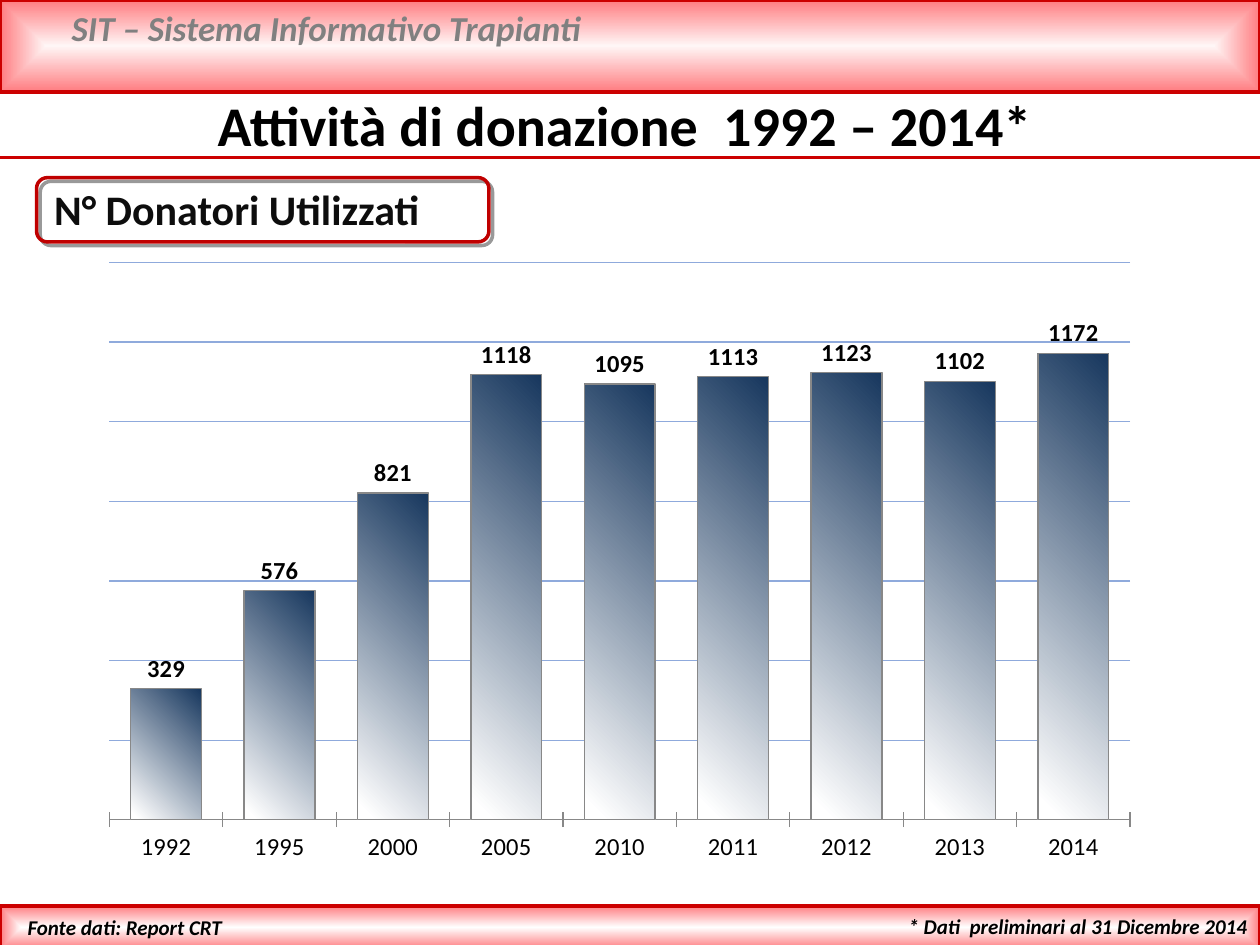
from dataclasses import dataclass

from lxml import etree
from pptx import Presentation
from pptx.chart.data import CategoryChartData
from pptx.dml.color import RGBColor
from pptx.enum.chart import XL_CHART_TYPE, XL_LABEL_POSITION, XL_TICK_MARK
from pptx.enum.shapes import MSO_CONNECTOR, MSO_SHAPE
from pptx.enum.text import MSO_AUTO_SIZE, PP_ALIGN
from pptx.oxml import parse_xml
from pptx.oxml.ns import nsdecls, qn
from pptx.util import Inches, Pt

COLUMNS = XL_CHART_TYPE.COLUMN_CLUSTERED
OUTSIDE_END = XL_LABEL_POSITION.OUTSIDE_END
TICK_CROSS, TICK_NONE = XL_TICK_MARK.CROSS, XL_TICK_MARK.NONE
STRAIGHT = MSO_CONNECTOR.STRAIGHT
RECTANGLE, ROUNDED = MSO_SHAPE.RECTANGLE, MSO_SHAPE.ROUNDED_RECTANGLE
FIT_TEXT = MSO_AUTO_SIZE.SHAPE_TO_FIT_TEXT
LEFT, CENTER, RIGHT = PP_ALIGN.LEFT, PP_ALIGN.CENTER, PP_ALIGN.RIGHT

FONT = "Calibri"
BLACK = RGBColor(0x00, 0x00, 0x00)
NEAR_BLACK = RGBColor(0x0D, 0x0D, 0x0D)
WHITE = RGBColor(0xFF, 0xFF, 0xFF)
GRAY = RGBColor(0x80, 0x80, 0x80)
AXIS_GRAY = RGBColor(0x88, 0x88, 0x88)
RED = RGBColor(0xCC, 0x00, 0x00)
DARK_RED = RGBColor(0xC0, 0x00, 0x00)
PINK = RGBColor(0xFF, 0x7C, 0x80)
PALE_PINK = RGBColor(0xFF, 0xF6, 0xF6)
NAVY = RGBColor(0x17, 0x37, 0x5E)
GRID_BLUE = RGBColor(0x8F, 0xAA, 0xDC)

DONORS = {
    "1992": 329, "1995": 576, "2000": 821,
    "2005": 1118, "2010": 1095, "2011": 1113,
    "2012": 1123, "2013": 1102, "2014": 1172,
}


@dataclass(frozen=True)
class Box:
    left: float
    top: float
    width: float
    height: float

    def lengths(self) -> tuple:
        return tuple(map(Inches, (self.left, self.top, self.width, self.height)))


@dataclass(frozen=True)
class Band:
    box: Box
    center: RGBColor


BANDS = (
    Band(Box(0, 0, 10, 0.73), PALE_PINK),
    Band(Box(0, 7.19, 10, 0.34), WHITE),
)


def set_gradient(fill, start: RGBColor, end: RGBColor) -> None:
    fill.gradient()
    for stop, color in zip(fill.gradient_stops, (start, end)):
        stop.color.rgb = color


def set_line(line, color: RGBColor, width: float) -> None:
    line.color.rgb = color
    line.width = Pt(width)


def add_band(slide, band: Band) -> None:
    shape = slide.shapes.add_shape(RECTANGLE, *band.box.lengths())
    shape.shadow.inherit = False
    set_gradient(shape.fill, band.center, PINK)
    set_line(shape.line, RED, 2)
    # Let the gradient spread from the centre to the edges
    linear = shape.element.spPr.find(qn("a:gradFill")).find(qn("a:lin"))
    linear.getparent().replace(linear, parse_xml(
        f'<a:path {nsdecls("a")} path="shape">'
        '<a:fillToRect l="50000" t="50000" r="50000" b="50000"/></a:path>'))


def add_text(slide, box: Box, text: str, *, size: float,
             color: RGBColor = BLACK, italic: bool = False,
             align: PP_ALIGN = LEFT, inset: float = 0.1) -> None:
    frame = slide.shapes.add_textbox(*box.lengths()).text_frame
    frame.word_wrap = True
    frame.auto_size = FIT_TEXT
    frame.margin_left = Inches(inset)
    paragraph = frame.paragraphs[0]
    paragraph.alignment = align
    run = paragraph.add_run()
    run.text = text
    font = run.font
    font.name, font.size = FONT, Pt(size)
    font.bold, font.italic = True, italic
    font.color.rgb = color


def add_rule(slide, y: float) -> None:
    rule = slide.shapes.add_connector(
        STRAIGHT, Inches(0), Inches(y), Inches(10), Inches(y))
    set_line(rule.line, RED, 2)
    etree.SubElement(rule.element.spPr, qn("a:effectLst"))


def add_label_frame(slide, box: Box) -> None:
    frame = slide.shapes.add_shape(ROUNDED, *box.lengths())
    frame.adjustments[0] = 0.167
    frame.fill.background()
    set_line(frame.line, DARK_RED, 2)
    frame.shadow.inherit = False
    frame.element.spPr.find(qn("a:effectLst")).append(parse_xml(
        f'<a:outerShdw {nsdecls("a")} blurRad="0" dist="{Pt(3)}" dir="2700000" '
        'algn="tl" rotWithShape="0"><a:srgbClr val="000000">'
        '<a:alpha val="40000"/></a:srgbClr></a:outerShdw>'))


def add_donor_chart(slide, box: Box) -> None:
    data = CategoryChartData()
    data.categories = list(DONORS)
    data.add_series("Series 1", list(DONORS.values()))
    chart = slide.shapes.add_chart(COLUMNS, *box.lengths(), data).chart
    chart.has_legend = chart.has_title = False
    chart.font.name, chart.font.size = FONT, Pt(10)
    chart.font.color.rgb = BLACK

    # Axes
    years = chart.category_axis
    years.major_tick_mark, years.minor_tick_mark = TICK_CROSS, TICK_NONE
    years.tick_labels.font.size = Pt(14)
    set_line(years.format.line, AXIS_GRAY, 0.75)
    counts = chart.value_axis
    counts.minimum_scale, counts.maximum_scale, counts.major_unit = 0, 1400, 200
    counts.has_major_gridlines = True
    set_line(counts.major_gridlines.format.line, GRID_BLUE, 0.75)
    counts.visible = False

    # Columns and their values
    plot = chart.plots[0]
    plot.gap_width, plot.overlap = 60, -20
    plot.vary_by_categories = False
    columns = plot.series[0].format
    set_gradient(columns.fill, NAVY, WHITE)
    columns.fill.gradient_stops[1].position = 0.96
    columns.fill.gradient_angle = 225
    set_line(columns.line, AXIS_GRAY, 0.75)
    plot.has_data_labels = True
    labels = plot.data_labels
    labels.show_value = True
    labels.position = OUTSIDE_END
    labels.font.size, labels.font.bold = Pt(14), True

    # Fixed plot area
    plot_area = chart.element.find(".//" + qn("c:plotArea"))
    for layout in plot_area.findall(qn("c:layout")):
        plot_area.remove(layout)
    plot_area.insert(0, parse_xml(
        f'<c:layout {nsdecls("c")}><c:manualLayout><c:layoutTarget val="inner"/>'
        '<c:xMode val="edge"/><c:yMode val="edge"/><c:x val="0.014"/>'
        '<c:y val="0.033"/><c:w val="0.961"/><c:h val="0.89"/>'
        '</c:manualLayout></c:layout>'))


def main() -> None:
    deck = Presentation()
    deck.slide_width, deck.slide_height = Inches(10), Inches(7.5)
    slide = deck.slides.add_slide(deck.slide_layouts[6])

    # Header, footer and title rule
    for band in BANDS:
        add_band(slide, band)
    add_text(slide, Box(0.47, 0, 8.98, 0.44), "SIT – Sistema Informativo Trapianti",
             size=20, color=GRAY, italic=True)
    add_rule(slide, 1.25)
    add_text(slide, Box(5.87, 7.2, 4.13, 0.3),
             "* Dati  preliminari al 31 Dicembre 2014",
             size=12, italic=True, align=RIGHT)
    add_text(slide, Box(0.12, 7.21, 3.21, 0.3), "Fonte dati: Report CRT",
             size=12, italic=True)

    # Chart, title and chart label
    add_donor_chart(slide, Box(0.75, 1.92, 8.43, 4.97))
    add_text(slide, Box(0, 0.67, 9.92, 0.64), "Attività di donazione  1992 – 2014*",
             size=32, align=CENTER)
    add_text(slide, Box(0.25, 1.41, 3.65, 0.51), "N° Donatori Utilizzati",
             size=24, color=NEAR_BLACK, inset=0.18)
    add_label_frame(slide, Box(0.29, 1.41, 3.59, 0.51))

    deck.save("out.pptx")


if __name__ == "__main__":
    main()
